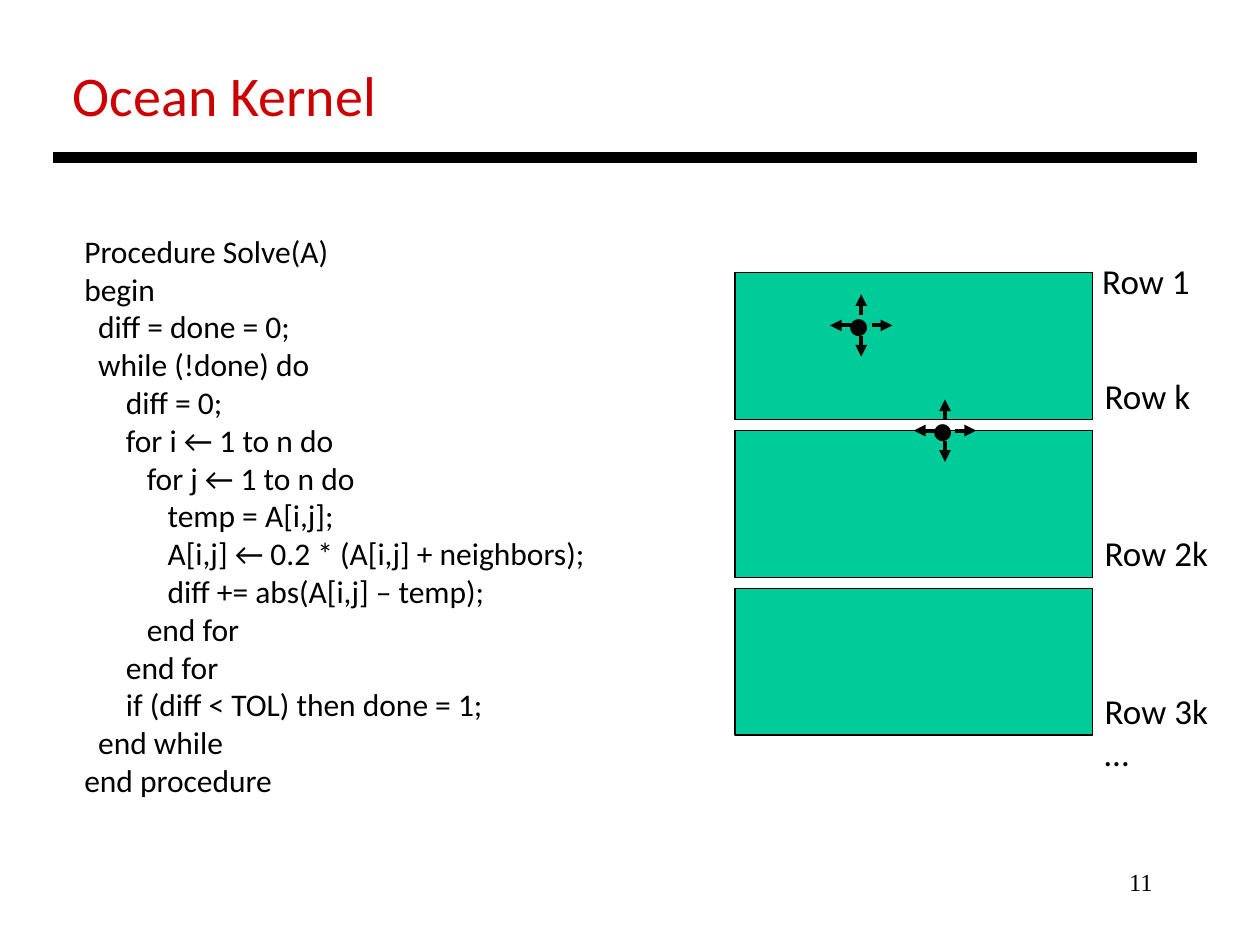
from dataclasses import dataclass

from lxml.etree import SubElement
from pptx import Presentation
from pptx.dml.color import RGBColor
from pptx.enum.shapes import MSO_CONNECTOR, MSO_SHAPE
from pptx.enum.text import MSO_AUTO_SIZE, PP_ALIGN
from pptx.oxml.ns import qn
from pptx.util import Cm, Pt


@dataclass(frozen=True)
class Theme:
    ink: RGBColor = RGBColor(0, 0, 0)
    red: RGBColor = RGBColor(0xCC, 0, 0)
    green: RGBColor = RGBColor(0, 0xCC, 0x99)
    sans: str = "Calibri"
    serif: str = "Times New Roman"
    title: int = 32
    code: int = 18
    label: int = 20
    page: int = 14
    dot: int = 80


@dataclass(frozen=True)
class Box:
    x: float
    y: float
    w: float
    h: float


@dataclass(frozen=True)
class Label:
    box: Box
    lines: tuple[str, ...]


@dataclass(frozen=True)
class Point:
    x: float
    y: float


THEME = Theme()
SPACE = 0.14  # indent of one code column

# Code lines with their indent in columns
CODE = (
    (0, "Procedure Solve(A)"),
    (0, "begin"),
    (2, "diff = done = 0;"),
    (2, "while (!done) do"),
    (6, "diff = 0;"),
    (6, "for i ← 1 to n do"),
    (9, "for j ← 1 to n do"),
    (12, "temp = A[i,j];"),
    (12, "A[i,j] ← 0.2 * (A[i,j] + neighbors);"),
    (12, "diff += abs(A[i,j] – temp);"),
    (9, "end for"),
    (6, "end for"),
    (6, "if (diff < TOL) then done = 1;"),
    (2, "end while"),
    (0, "end procedure"),
)

BAND = Box(14.82, 5.5, 7.2, 2.96)
PITCH = 3.18
CELLS = (Point(17.36, 6.56), Point(19.05, 8.68))
GAP, REACH = 0.21, 0.63
WAYS = ((0, -1), (0, 1), (1, 0), (-1, 0))  # up, down, right, left

LABELS = (
    Label(Box(21.97, 5.11, 2.29, 1.11), ("Row 1",)),
    Label(Box(22.02, 7.42, 2.26, 1.11), ("Row k",)),
    Label(Box(22.02, 10.59, 2.62, 1.11), ("Row 2k",)),
    Label(Box(22.02, 13.77, 2.62, 1.96), ("Row 3k", "…")),
)


def add_text(slide, box: Box, lines, size: int, color=THEME.ink,
             face: str = THEME.sans, align=PP_ALIGN.LEFT, wrap: bool = False):
    shape = slide.shapes.add_textbox(Cm(box.x), Cm(box.y), Cm(box.w), Cm(box.h))
    frame = shape.text_frame
    frame.word_wrap = wrap
    frame.auto_size = MSO_AUTO_SIZE.NONE if wrap else MSO_AUTO_SIZE.SHAPE_TO_FIT_TEXT
    frame.text = "\n".join(lines)
    for para in frame.paragraphs:
        para.alignment = align
        para.font.size = Pt(size)
        para.font.name = face
        para.font.color.rgb = color
    return frame


def add_line(slide, start: Point, end: Point, width: float, arrow: bool = False):
    line = slide.shapes.add_connector(
        MSO_CONNECTOR.STRAIGHT, Cm(start.x), Cm(start.y), Cm(end.x), Cm(end.y))
    line.line.color.rgb = THEME.ink
    line.line.width = Pt(width)
    if arrow:
        SubElement(line.line._get_or_add_ln(), qn("a:tailEnd"), type="triangle")
    SubElement(line._element.spPr, qn("a:effectLst"))
    return line


def add_band(slide, box: Box):
    band = slide.shapes.add_shape(
        MSO_SHAPE.RECTANGLE, Cm(box.x), Cm(box.y), Cm(box.w), Cm(box.h))
    band.shadow.inherit = False
    band.fill.solid()
    band.fill.fore_color.rgb = THEME.green
    band.line.color.rgb = THEME.ink
    band.line.width = Pt(0.75)
    return band


def add_cell(slide, mid: Point) -> list:
    """Draw a grid point and the arrows to its four neighbors."""
    add_text(slide, Box(mid.x - 0.64, mid.y - 2.75, 1.24, 3.68), ["."], THEME.dot)
    return [
        add_line(slide, Point(mid.x + dx * GAP, mid.y + dy * GAP),
                 Point(mid.x + dx * REACH, mid.y + dy * REACH), 2.25, arrow=True)
        for dx, dy in WAYS
    ]


def main() -> None:
    deck = Presentation()
    deck.slide_width, deck.slide_height = Cm(25.4), Cm(19.05)
    slide = deck.slides.add_slide(deck.slide_layouts[6])

    # Page number, title and rule
    add_text(slide, Box(18.21, 17.35, 5.28, 1.27), ["11"], THEME.page,
             face=THEME.serif, align=PP_ALIGN.RIGHT, wrap=True)
    add_text(slide, Box(1.22, 1.09, 6.68, 1.63), ["Ocean Kernel"],
             THEME.title, THEME.red)
    add_line(slide, Point(1.07, 3.18), Point(24.13, 3.18), 6)

    # Code
    frame = add_text(slide, Box(1.45, 4.55, 10.82, 11.79),
                     [text for _, text in CODE], THEME.code)
    for para, (depth, _) in zip(frame.paragraphs, CODE):
        para._p.get_or_add_pPr().set("marL", str(Cm(depth * SPACE)))

    # Row bands
    bands = [add_band(slide, Box(BAND.x, BAND.y + i * PITCH, BAND.w, BAND.h))
             for i in range(3)]

    # Grid points; the left arrow of the second meets the middle band's top
    stars = [add_cell(slide, mid) for mid in CELLS]
    stars[1][-1].end_connect(bands[1], 0)

    # Row labels
    for label in LABELS:
        add_text(slide, label.box, label.lines, THEME.label)

    deck.save("out.pptx")


if __name__ == "__main__":
    main()
